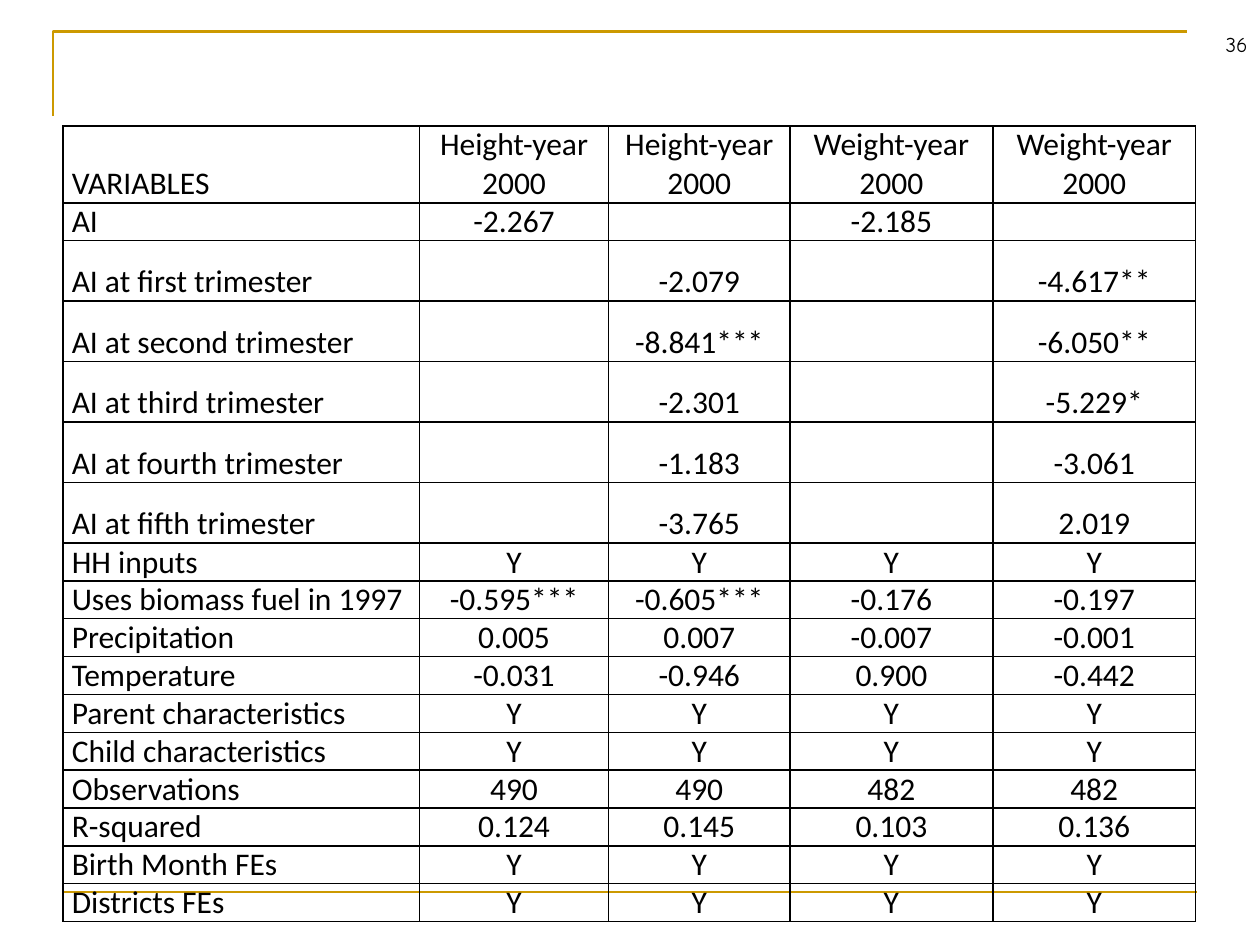
from lxml import etree
from pptx import Presentation
from pptx.dml.color import RGBColor
from pptx.enum.shapes import MSO_CONNECTOR
from pptx.enum.text import MSO_ANCHOR, PP_ALIGN
from pptx.oxml.ns import qn
from pptx.util import Inches, Pt

LEFT, MID, RIGHT = PP_ALIGN.LEFT, PP_ALIGN.CENTER, PP_ALIGN.RIGHT
BOTTOM = MSO_ANCHOR.BOTTOM
STRAIGHT = MSO_CONNECTOR.STRAIGHT

HUES = {"ink": "000000", "gold": "CC9900"}
YES = ["Y"] * 4
ROWS = [
    ["VARIABLES"] + ["Height-year 2000"] * 2 + ["Weight-year 2000"] * 2,
    ["AI", "-2.267", "", "-2.185", ""],
    ["AI at first trimester", "", "-2.079", "", "-4.617**"],
    ["AI at second trimester", "", "-8.841***", "", "-6.050**"],
    ["AI at third trimester", "", "-2.301", "", "-5.229*"],
    ["AI at fourth trimester", "", "-1.183", "", "-3.061"],
    ["AI at fifth trimester", "", "-3.765", "", "2.019"],
    ["HH inputs", *YES],
    ["Uses biomass fuel in 1997", "-0.595***", "-0.605***", "-0.176", "-0.197"],
    ["Precipitation", "0.005", "0.007", "-0.007", "-0.001"],
    ["Temperature", "-0.031", "-0.946", "0.900", "-0.442"],
    ["Parent characteristics", *YES],
    ["Child characteristics", *YES],
    ["Observations", "490", "490", "482", "482"],
    ["R-squared", "0.124", "0.145", "0.103", "0.136"],
    ["Birth Month FEs", *YES],
    ["Districts FEs", *YES],
]
COLS = [2.83, 1.5, 1.44, 1.61, 1.61]
HIGH = [0.61, 0.3] + [0.48] * 5 + [0.3] * 10
WIDE, TALL = 10, 7.5
SIDE, TOP, EDGE = 0.5, 1, 9.42


def write(frame, text, size=18, font="Calibri", hue="ink", align=LEFT):
    para = frame.paragraphs[0]
    para.alignment = align
    if not text:
        return
    run = para.add_run()
    run.text = text
    run.font.size = Pt(size)
    run.font.name = font
    run.font.color.rgb = RGBColor.from_string(HUES[hue])


def stroke(line):
    line.color.rgb = RGBColor.from_string(HUES["gold"])
    line.width = Pt(1.5)


def border(cell):
    props = cell._tc.get_or_add_tcPr()
    for spot, side in enumerate(("lnL", "lnR", "lnT", "lnB")):
        edge = etree.Element(qn("a:" + side), w=str(Pt(1)))
        fill = etree.SubElement(edge, qn("a:solidFill"))
        etree.SubElement(fill, qn("a:srgbClr"), val=HUES["ink"])
        props.insert(spot, edge)


deck = Presentation()
deck.slide_width, deck.slide_height = Inches(WIDE), Inches(TALL)
slide = deck.slides.add_slide(deck.slide_layouts[6])
shapes = slide.shapes

pen = shapes.build_freeform(Inches(0.42), Inches(0.92))
pen.add_line_segments(
    [(Inches(0.42), Inches(0.25)), (Inches(EDGE), Inches(0.25))], close=False
)
frame = pen.convert_to_shape()
frame.shadow.inherit = False
frame.fill.background()
stroke(frame.line)

rule = shapes.add_connector(
    STRAIGHT, Inches(SIDE), Inches(7.08), Inches(WIDE - SIDE), Inches(7.08)
)
stroke(rule.line)
etree.SubElement(rule._element.spPr, qn("a:effectLst"))

page = shapes.add_textbox(Inches(EDGE), 0, Inches(WIDE - EDGE), Inches(0.5)).text_frame
page.word_wrap = True
page.vertical_anchor = BOTTOM
write(page, "36", size=12, font="Comic Neue", align=RIGHT)

table = shapes.add_table(
    len(ROWS), len(COLS), Inches(SIDE), Inches(TOP), Inches(sum(COLS)), Inches(sum(HIGH))
).table
table.first_row = table.horz_banding = False
for col, width in zip(table.columns, COLS):
    col.width = Inches(width)
for row, height, texts in zip(table.rows, HIGH, ROWS):
    row.height = Inches(height)
    for spot, (cell, text) in enumerate(zip(row.cells, texts)):
        cell.margin_left = cell.margin_right = Inches(0.07)
        cell.margin_top = cell.margin_bottom = 0
        cell.vertical_anchor = BOTTOM
        cell.fill.background()
        border(cell)
        write(cell.text_frame, text, align=MID if spot else LEFT)

deck.save("out.pptx")
